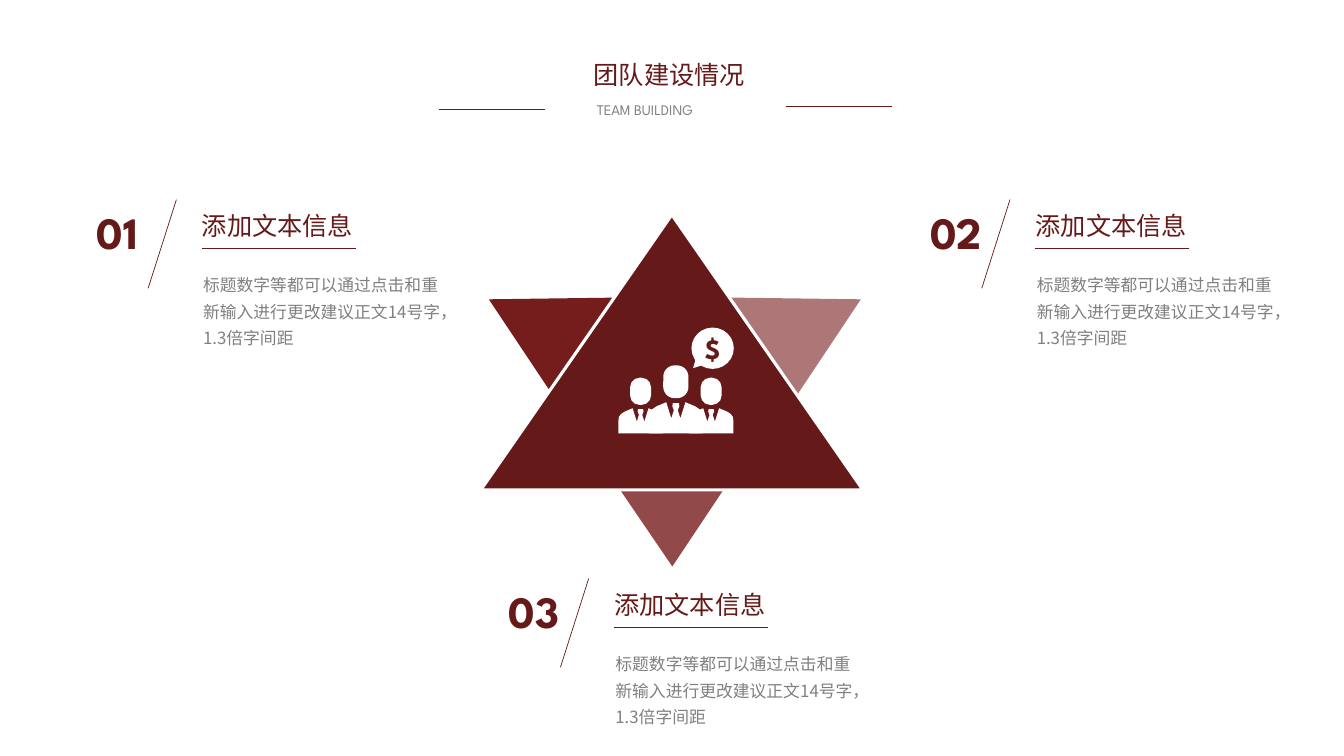
from dataclasses import dataclass
from typing import NamedTuple

from lxml import etree
from pptx import Presentation, util as u
from pptx.dml import color
from pptx.enum import shapes as es, text as et
from pptx.oxml import ns

# Grid: square cells, a tenth of an inch each
CELL = u.Inches(0.1)
COLS, ROWS = 133.33, 75


@dataclass(frozen=True)
class Theme:
    main: str = "651919"
    left: str = "751D1C"
    right: str = "AD7777"
    low: str = "91494A"
    grey: str = "808080"
    white: str = "FFFFFF"
    latin: str = "League Spartan"
    han: str = "Noto Sans CJK SC"
    num: float = 32
    sign: float = 20
    head: float = 18
    body: float = 12
    sub: float = 10.5
    thin: float = 0.5
    edge: float = 2.25


T = Theme()


class Box(NamedTuple):
    col: float
    row: float
    wide: float
    high: float

    def move(self, col: float, row: float) -> "Box":
        return Box(self.col + col, self.row + row, self.wide, self.high)


class Style(NamedTuple):
    size: float
    font: str
    ink: str
    bold: bool = False
    lead: float = 1.0
    align: et.PP_ALIGN = et.PP_ALIGN.LEFT


class Item(NamedTuple):
    num: str
    col: float
    row: float


class Petal(NamedTuple):
    col: float
    row: float
    side: int
    fill: str


class Person(NamedTuple):
    col: float
    neck: float
    size: float


NUM = Style(T.num, T.latin, T.main, True)
SIGN = Style(T.sign, T.latin, T.main, True, align=et.PP_ALIGN.CENTER)
HEAD = Style(T.head, T.han, T.main)
BODY = Style(T.body, T.han, T.grey, lead=1.3)
SUB = Style(T.sub, T.latin, T.grey)

NOTE = "标题数字等都可以通过点击和重新输入进行更改建议正文14号字，1.3倍字间距"
ITEMS = [Item("01", 8.6, 19.8), Item("02", 91.3, 19.8), Item("03", 49.5, 57.4)]
PETALS = [Petal(55.7, 40.5, 1, T.left), Petal(78.2, 40.5, -1, T.right),
          Petal(66.7, 56.2, -1, T.low)]

# Icon: a leader between two others, all standing on one base row
MID, GAP, BASE = 67.05, 3.5, 43
TEAM = [Person(MID - GAP, 40.5, 0.83), Person(MID, 39.9, 1), Person(MID + GAP, 40.5, 0.83)]
# Right half of a bust, measured from the neck
TIE = [(0.3, 0.1), (0.35, 0.4), (0.2, 0.8)]
COLLAR = [(0.45, 1.6), (0.95, 0)]
SHOULDER = [(1.9, 0.4), (2.35, 0.7), (2.6, 1.05), (2.65, 1.5)]


def put(item: object, vals: dict) -> None:
    for key, val in vals.items():
        setattr(item, key, val)


def emu(cells: float) -> int:
    return round(cells * CELL)


def rgb(code: str) -> color.RGBColor:
    return color.RGBColor.from_string(code)


def paint(shape, fill: str, edge: str = "") -> None:
    shape.shadow.inherit = False
    shape.fill.solid()
    shape.fill.fore_color.rgb = rgb(fill)
    if edge:
        shape.line.color.rgb = rgb(edge)
        shape.line.width = u.Pt(T.edge)
    else:
        shape.line.fill.background()


def draw(slide, kind: es.MSO_SHAPE, box: Box, fill: str, edge: str = ""):
    shape = slide.shapes.add_shape(kind, *map(emu, box))
    paint(shape, fill, edge)
    return shape


def outline(slide, pts: list, fill: str) -> None:
    first, *rest = [(emu(x), emu(y)) for x, y in pts]
    pen = slide.shapes.build_freeform(*first)
    pen.add_line_segments(rest, close=True)
    paint(pen.convert_to_shape(), fill)


def rule(slide, *ends: float) -> None:
    line = slide.shapes.add_connector(es.MSO_CONNECTOR.STRAIGHT, *map(emu, ends))
    line.line.color.rgb = rgb(T.main)
    line.line.width = u.Pt(T.thin)
    etree.SubElement(line._element.spPr, ns.qn("a:effectLst"))


def fill_in(shape, words: str, style: Style) -> None:
    shape.text_frame.text = words
    para = shape.text_frame.paragraphs[0]
    put(para, {"alignment": style.align, "line_spacing": style.lead, "space_before": u.Pt(0)})
    font = para.runs[0].font
    put(font, {"size": u.Pt(style.size), "name": style.font, "bold": style.bold})
    font.color.rgb = rgb(style.ink)
    etree.SubElement(font._element, ns.qn("a:ea"), typeface=style.font)
    if shape.is_placeholder:
        props = para._p.get_or_add_pPr()
        for key in ("marL", "indent"):
            props.set(key, "0")
        etree.SubElement(props, ns.qn("a:buNone"))


def write(shape, box: Box, words: str, style: Style, wrap: bool = True) -> None:
    put(shape, dict(zip(("left", "top", "width", "height"), map(emu, box))))
    put(shape.text_frame, {"word_wrap": wrap, "vertical_anchor": et.MSO_ANCHOR.TOP,
                           "auto_size": et.MSO_AUTO_SIZE.SHAPE_TO_FIT_TEXT})
    fill_in(shape, words, style)


def label(slide, box: Box, words: str, style: Style) -> None:
    write(slide.shapes.add_textbox(0, 0, 0, 0), box, words, style)


def star(slide) -> None:
    for p in PETALS:
        outline(slide, [(p.col, p.row), (p.col - 7.2 * p.side, p.row - 10.8),
                        (p.col + 7.5 * p.side, p.row - 11)], p.fill)
    draw(slide, es.MSO_SHAPE.ISOSCELES_TRIANGLE, Box(47.7, 21.3, 37.9, 27.3), T.main, T.white)


def figure(slide, who: Person) -> None:
    half = [(x * who.size, who.neck + y * who.size) for x, y in TIE + COLLAR + SHOULDER]
    half.append((half[-1][0], BASE))
    right = [(who.col + x, y) for x, y in half]
    left = [(who.col - x, y) for x, y in reversed(half)]
    outline(slide, right + left, T.white)
    wide, high, rise = (k * who.size for k in (2.5, 3.25, 3.65))
    face = draw(slide, es.MSO_SHAPE.ROUNDED_RECTANGLE,
                Box(who.col - wide / 2, who.neck - rise, wide, high), T.white)
    face.adjustments[0] = 0.45


def bubble(slide) -> None:
    shape = draw(slide, es.MSO_SHAPE.OVAL_CALLOUT, Box(68.6, 32.5, 4.2, 4.1), T.white)
    for i, share in enumerate((-0.46, 0.48)):
        shape.adjustments[i] = share
    sides = ("left", "right", "top", "bottom")
    put(shape.text_frame, {f"margin_{side}": 0 for side in sides})
    put(shape.text_frame, {"word_wrap": False, "vertical_anchor": et.MSO_ANCHOR.MIDDLE})
    fill_in(shape, "$", SIGN)


def block(slide, item: Item, body) -> None:
    x, y = item.col, item.row
    label(slide, Box(0, 0, 7.8, 6.4).move(x, y), item.num, NUM)
    rule(slide, x + 8.9, y, x + 6.1, y + 8.8)
    rule(slide, x + 26.7, y + 4.8, x + 11.4, y + 4.8)
    label(slide, Box(10.45, 0.55, 22.2, 4).move(x, y), "添加文本信息", HEAD)
    write(body, Box(10.55, 6.4, 26.5, 8.6).move(x, y), NOTE, BODY)


def main() -> None:
    deck = Presentation()
    put(deck, {"slide_width": emu(COLS), "slide_height": emu(ROWS)})
    slide = deck.slides.add_slide(deck.slide_layouts.get_by_name("Comparison"))
    title, sub, *bodies = slide.placeholders

    # Heading
    write(title, Box(57.9, 5.4, 22.2, 4), "团队建设情况", HEAD)
    write(sub, Box(58.2, 9.5, 12.9, 2.8), "TEAM BUILDING", SUB, wrap=False)
    for col, row in ((43.6, 10.9), (78, 10.6)):
        rule(slide, col + 10.5, row, col, row)

    # Star with the team and its speech bubble
    star(slide)
    for who in TEAM:
        figure(slide, who)
    bubble(slide)

    # Numbered blocks
    for item, body in zip(ITEMS, bodies):
        block(slide, item, body)
    deck.save("out.pptx")


if __name__ == "__main__":
    main()
